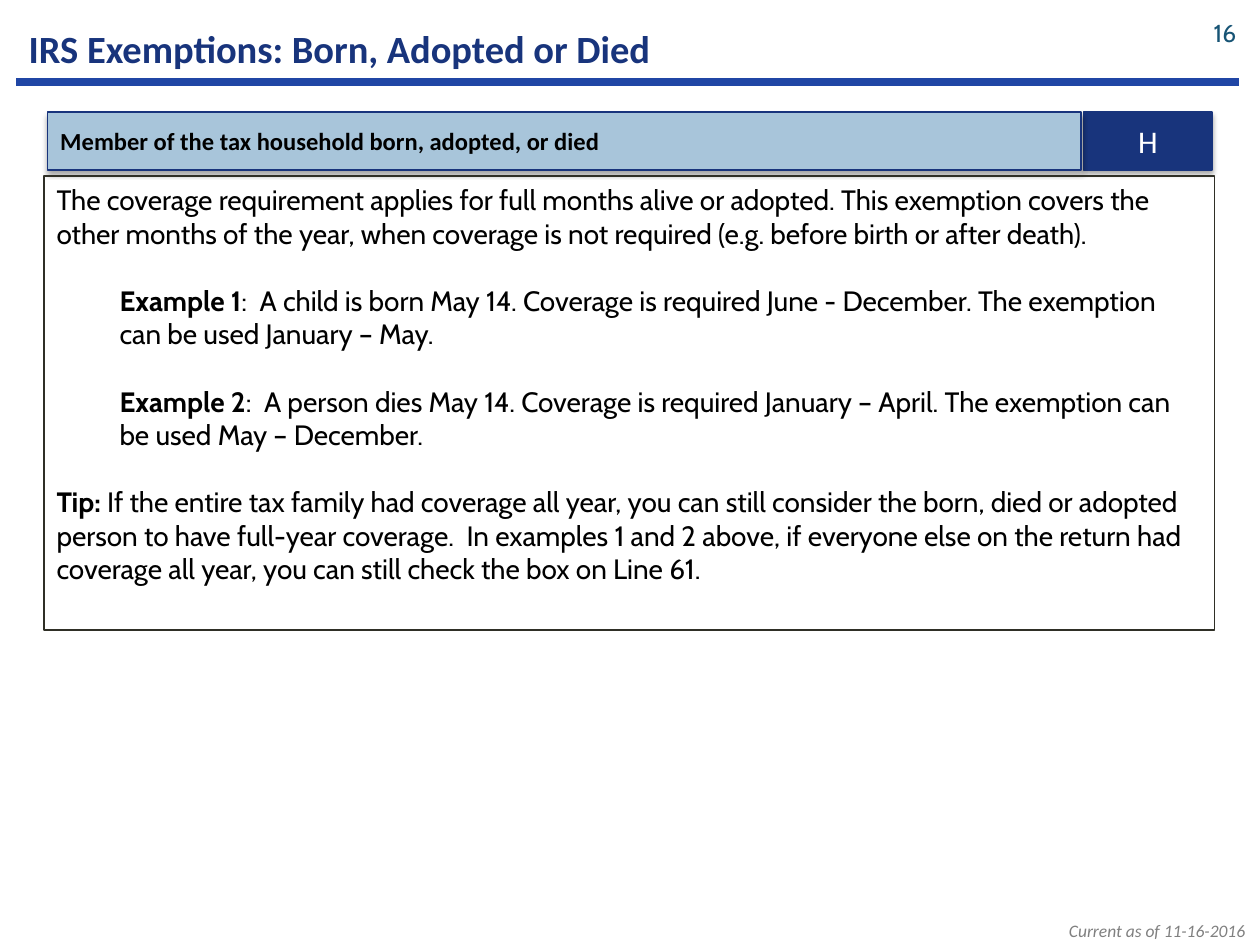
from pptx import Presentation
from pptx.dml.color import RGBColor
from pptx.enum.shapes import MSO_CONNECTOR, MSO_SHAPE
from pptx.enum.text import MSO_ANCHOR, PP_ALIGN
from pptx.oxml import parse_xml
from pptx.oxml.ns import nsdecls, qn
from pptx.util import Inches, Pt

LEFT, MID, RIGHT = PP_ALIGN.LEFT, PP_ALIGN.CENTER, PP_ALIGN.RIGHT
TOP, CENTER = MSO_ANCHOR.TOP, MSO_ANCHOR.MIDDLE
RECT, LINE = MSO_SHAPE.RECTANGLE, MSO_CONNECTOR.STRAIGHT
COLORS = {
    "navy": "18347C", "rule": "2046A5", "sky": "A8C5DA", "teal": "175475",
    "gray": "808080", "edge": "2F2F26", "black": "000000", "white": "FFFFFF",
}
SHADOW = (
    f'<a:effectLst {nsdecls("a")}><a:outerShdw blurRad="39370" dist="22860" '
    'dir="5400000" rotWithShape="0"><a:srgbClr val="000000">'
    '<a:alpha val="35000"/></a:srgbClr></a:outerShdw></a:effectLst>'
)


def color(name):
    return RGBColor.from_string(COLORS[name])


def write(shape, paras, size=16, font="Calibri", ink="black", bold=False,
          italic=False, align=LEFT, anchor=CENTER, gap=0):
    frame = shape.text_frame
    frame.word_wrap = True
    frame.vertical_anchor = anchor
    for i, (indent, lead, words) in enumerate(paras):
        para = frame.add_paragraph() if i else frame.paragraphs[0]
        para.alignment = align
        if indent:
            para._p.get_or_add_pPr().set("marL", str(Inches(indent)))
        if i:
            para.space_before = Pt(gap)
        for part, heavy in ((lead, True), (words, bold)):
            if part:
                run = para.add_run()
                run.text = part
                run.font.name = font
                run.font.size = Pt(size)
                run.font.bold = heavy
                run.font.italic = italic
                run.font.color.rgb = color(ink)


deck = Presentation()
deck.slide_width, deck.slide_height = Inches(10), Inches(7.5)
slide = deck.slides.add_slide(deck.slide_layouts[6])
shapes = slide.shapes

rule = shapes.add_connector(LINE, Inches(0.13), Inches(0.65), Inches(9.83), Inches(0.65))
rule.line.color.rgb = color("rule")
rule.line.width = Pt(4.75)
rule._element.spPr.append(parse_xml(f'<a:effectLst {nsdecls("a")}/>'))

labels = [
    ((5.97, 7.25, 4.01, 0.27), "Current as of 11-16-2016",
     dict(size=10, ink="gray", italic=True, align=RIGHT, anchor=TOP)),
    ((0.13, 0.1, 9, 0.57), "IRS Exemptions: Born, Adopted or Died",
     dict(size=22, ink="navy", bold=True)),
    ((9.4, 0.06, 0.51, 0.4), "16",
     dict(size=14, font="Cabin", ink="teal", align=RIGHT)),
]
for box, words, style in labels:
    write(shapes.add_textbox(*map(Inches, box)), [(0, "", words)], **style)

bars = [
    (8.6, 1.02, "navy", "H", dict(size=18, ink="white", align=MID)),
    (0.38, 8.2, "sky", "Member of the tax household born, adopted, or died",
     dict(size=14, bold=True)),
]
for left, width, fill, words, style in bars:
    bar = shapes.add_shape(RECT, Inches(left), Inches(0.89), Inches(width), Inches(0.46))
    bar.shadow.inherit = False
    props = bar._element.spPr
    bar.fill.solid()
    bar.fill.fore_color.rgb = color(fill)
    bar.line.color.rgb = color("navy")
    bar.line.width = Pt(0.75)
    props.replace(props.find(qn("a:effectLst")), parse_xml(SHADOW))
    write(bar, [(0, "", words)], **style)

body = shapes.add_shape(RECT, Inches(0.35), Inches(1.4), Inches(9.29), Inches(3.6))
body.shadow.inherit = False
body.fill.background()
body.line.color.rgb = color("edge")
body.line.width = Pt(1)
paras = [
    (0, "", "The coverage requirement applies for full months alive or adopted. "
     "This exemption covers the other months of the year, when coverage is not "
     "required (e.g. before birth or after death)."),
    (0.5, "Example 1", ":  A child is born May 14. Coverage is required "
     "June - December. The exemption can be used January – May."),
    (0.5, "Example 2", ":  A person dies May 14. Coverage is required "
     "January – April. The exemption can be used May – December."),
    (0, "Tip: ", "If the entire tax family had coverage all year, you can still "
     "consider the born, died or adopted person to have full-year coverage.  "
     "In examples 1 and 2 above, if everyone else on the return had coverage "
     "all year, you can still check the box on Line 61."),
]
write(body, paras, font="Cabin", anchor=TOP, gap=19.2)

deck.save("out.pptx")
